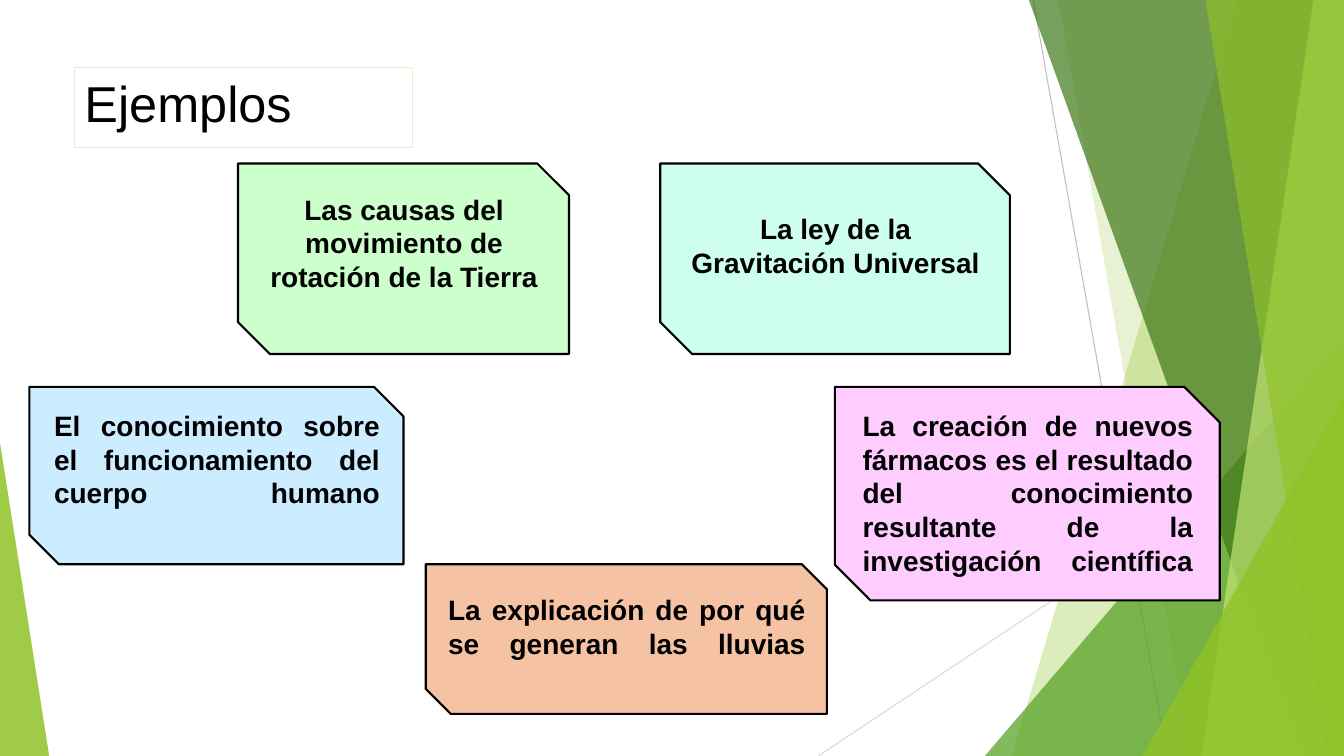
import dataclasses

import pptx
import pptx.dml.color
import pptx.enum.shapes
import pptx.enum.text
import pptx.oxml
import pptx.oxml.ns
import pptx.util

Cm = pptx.util.Cm
Pt = pptx.util.Pt
Shape = pptx.enum.shapes.MSO_SHAPE
Align = pptx.enum.text.PP_ALIGN
Anchor = pptx.enum.text.MSO_ANCHOR

WIDTH, HEIGHT = 33.87, 19.05


@dataclasses.dataclass(frozen=True)
class Theme:
    font: str = "Arial"
    title_size: int = 36
    card_size: int = 20
    ink: str = "000000"
    title_edge: str = "DBF4CA"
    lime: str = "90C226"
    pale_lime: str = "C0E474"
    green: str = "54A021"
    dark_green: str = "3F7819"
    gray: str = "BFBFBF"
    light_gray: str = "D9D9D9"
    mint: str = "CCFFCC"
    aqua: str = "CEFEEC"
    sky: str = "CCECFF"
    peach: str = "F5C2A3"
    pink: str = "FFCCFF"


THEME = Theme()


def rgb(color):
    return pptx.dml.color.RGBColor.from_string(color)


def fill_shape(shape, color, opacity=100):
    shape.shadow.inherit = False
    shape.fill.solid()
    shape.fill.fore_color.rgb = rgb(color)
    if opacity < 100:
        clr = shape.fill._xPr.find(".//" + pptx.oxml.ns.qn("a:srgbClr"))
        alpha = pptx.oxml.parse_xml(
            f'<a:alpha {pptx.oxml.ns.nsdecls("a")} val="{opacity * 1000}"/>')
        clr.append(alpha)


def outline(shape, color, width):
    shape.line.color.rgb = rgb(color)
    shape.line.width = Pt(width)


def add_line(page, start, end, color):
    line = page.shapes.add_connector(
        pptx.enum.shapes.MSO_CONNECTOR.STRAIGHT, *map(Cm, start + end))
    outline(line, color, 0.75)
    line._element.spPr.append(pptx.oxml.parse_xml(
        f'<a:effectLst {pptx.oxml.ns.nsdecls("a")}/>'))


def add_band(page, top_x, bottom_x, color, opacity):
    """Full-height band from a slanted left edge to the slide's right edge."""
    builder = page.shapes.build_freeform(Cm(top_x), 0, scale=1.0)
    corners = [(WIDTH, 0), (WIDTH, HEIGHT), (bottom_x, HEIGHT)]
    builder.add_line_segments([(Cm(x), Cm(y)) for x, y in corners], close=True)
    band = builder.convert_to_shape()
    fill_shape(band, color, opacity)
    band.line.fill.background()


def add_corner(page, left, top, width, apex, color, opacity):
    """Triangle standing on the bottom edge of the slide."""
    corner = page.shapes.add_shape(
        Shape.ISOSCELES_TRIANGLE, Cm(left), Cm(top), Cm(width), Cm(HEIGHT - top))
    corner.adjustments[0] = apex
    fill_shape(corner, color, opacity)
    corner.line.fill.background()


def write(frame, text, size, align, bold=False):
    frame.word_wrap = True
    frame.vertical_anchor = Anchor.TOP
    para = frame.paragraphs[0]
    para.text = text
    para.alignment = align
    para.font.name = THEME.font
    para.font.size = Pt(size)
    para.font.bold = bold
    para.font.color.rgb = rgb(THEME.ink)


def add_title(page, text):
    box = page.shapes.add_textbox(Cm(1.88), Cm(1.7), Cm(8.51), Cm(2.03))
    outline(box, THEME.title_edge, 0.75)
    write(box.text_frame, text, THEME.title_size, Align.LEFT)


def add_card(page, bounds, color, text, align, top_gap):
    card = page.shapes.add_shape(Shape.SNIP_2_DIAG_RECTANGLE, *map(Cm, bounds))
    fill_shape(card, color)
    outline(card, THEME.ink, 1.5)
    frame = card.text_frame
    frame.margin_top, frame.margin_bottom = Cm(top_gap), 0
    frame.margin_right = Cm(0.22)
    # A closing line break stretches the last justified line
    ending = "\v" if align == Align.JUSTIFY else ""
    write(frame, text + ending, THEME.card_size, align, bold=True)


def add_backdrop(page):
    add_line(page, (26.04, 0), (29.41, HEIGHT), THEME.gray)
    add_line(page, (WIDTH, 10.24), (20.62, HEIGHT), THEME.light_gray)
    add_band(page, 31.17, 25.5, THEME.lime, 30)
    add_band(page, 26.67, 30.02, THEME.lime, 20)
    add_corner(page, 24.82, 8.46, 9.05, 1, THEME.green, 72)
    add_band(page, 25.93, 32.79, THEME.dark_green, 70)
    add_band(page, 33.1, 30.28, THEME.pale_lime, 70)
    add_band(page, 30.38, 33.45, THEME.lime, 65)
    add_corner(page, 28.8, 9.98, 5.07, 1, THEME.lime, 80)
    add_corner(page, 0, 11.15, 1.24, 0, THEME.lime, 85)


def main():
    deck = pptx.Presentation()
    deck.slide_width, deck.slide_height = Cm(WIDTH), Cm(HEIGHT)
    page = deck.slides.add_slide(deck.slide_layouts[6])

    # Green facets
    add_backdrop(page)

    # Heading
    add_title(page, "Ejemplos")

    # Example cards: bounds, colour, text, alignment, gap above the text
    cards = [
        ((6, 4.12, 8.34, 4.8), THEME.mint,
         "Las causas del movimiento de rotación de la Tierra", Align.CENTER, 0.32),
        ((0.74, 9.75, 9.43, 4.47), THEME.sky,
         "El conocimiento sobre el funcionamiento del cuerpo humano",
         Align.JUSTIFY, 0.17),
        ((10.73, 14.22, 10.11, 3.77), THEME.peach,
         "La explicación de por qué se generan las lluvias", Align.JUSTIFY, 0.4),
        ((21.04, 9.75, 9.7, 5.38), THEME.pink,
         "La creación de nuevos fármacos es el resultado del conocimiento "
         "resultante de la investigación científica", Align.JUSTIFY, 0.1),
        ((16.64, 4.12, 8.81, 4.8), THEME.aqua,
         "La ley de la Gravitación Universal", Align.CENTER, 0.82),
    ]
    for card in cards:
        add_card(page, *card)

    deck.save("out.pptx")


if __name__ == "__main__":
    main()
